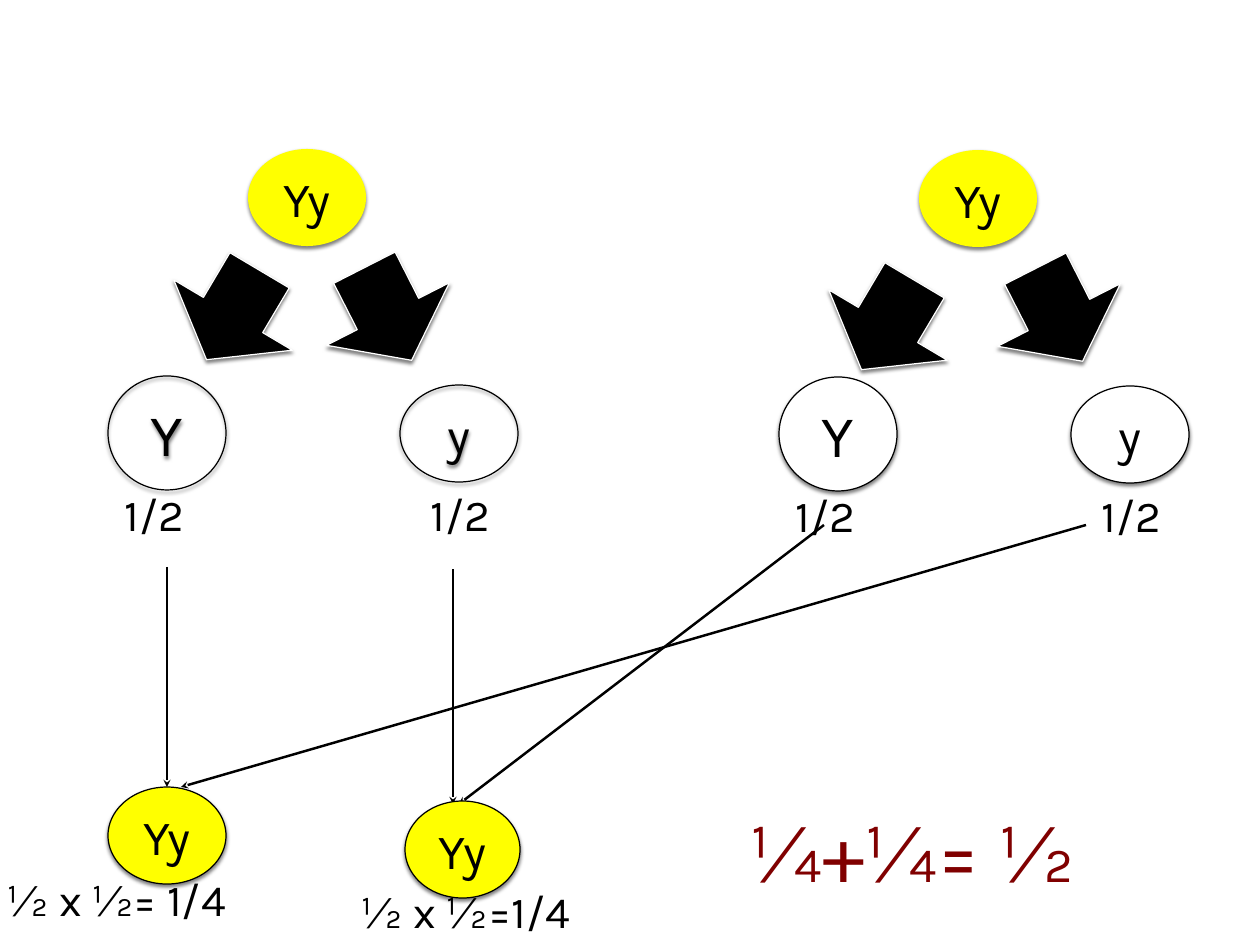
from lxml import etree
from pptx import Presentation
from pptx.dml.color import RGBColor
from pptx.enum.shapes import MSO_CONNECTOR, MSO_SHAPE
from pptx.enum.text import MSO_ANCHOR, PP_ALIGN
from pptx.oxml.ns import qn
from pptx.util import Pt

OVAL, ARROW = MSO_SHAPE.OVAL, MSO_SHAPE.RIGHT_ARROW
STRAIGHT = MSO_CONNECTOR.STRAIGHT
CENTER, RIGHT = PP_ALIGN.CENTER, PP_ALIGN.RIGHT
MIDDLE = MSO_ANCHOR.MIDDLE

SCALE = 914400 / 88.6
SLIDE = (1260, 945)
INSET = 5
FONT = "Karla"
BLACK, WHITE, YELLOW, MAROON = "000000", "FFFFFF", "FFFF00", "800000"

PARENTS = [
    {"offset": (0, 0), "gamete_fill": None, "left_arrow": (181, 246)},
    {"offset": (671, 1), "gamete_fill": WHITE, "left_arrow": (836, 256)},
]
PARENT = ("Yy", (248, 149, 118, 97), 40)
GAMETES = [
    ("Y", (108, 376, 118, 114), 48),
    ("y", (400, 385, 118, 97), 40),
]
CHANCE = "1/2"
CHANCE_LEFTS = (105, 411)
CHANCE_TOP, CHANCE_SIZE = 482, (84, 64)
RIGHT_ARROW_AT = (336, 245)
ARROW_SIZE = (104, 138)
LEFT_TURN, RIGHT_TURN = 120.7, 63

OFFSPRING = [
    {"genotype": "Yy", "box": (108, 787, 118, 97),
     "crosses": [(167, 567, 167, 787), (1086, 525, 181, 787)]},
    {"genotype": "Yy", "box": (405, 801, 115, 97),
     "crosses": [(453, 569, 453, 804), (824, 525, 459, 804)]},
]
SUMS = [
    ("½ x ½= 1/4", (0, 867, 231, 64), 36, BLACK),
    ("½ x ½=1/4", (330, 879, 245, 64), 36, BLACK),
    ("¼+¼= ½", (711, 796, 369, 108), 66, MAROON),
]


def px(*lengths):
    return [round(length * SCALE) for length in lengths]


def rgb(color):
    return RGBColor.from_string(color)


def moved(box, offset):
    return (box[0] + offset[0], box[1] + offset[1], *box[2:])


def write(holder, words, size, color, align):
    frame = holder.text_frame
    inset = px(INSET)[0]
    layout = {"word_wrap": True, "vertical_anchor": MIDDLE,
              "margin_left": inset, "margin_right": inset,
              "margin_top": inset, "margin_bottom": inset}
    for key, value in layout.items():
        setattr(frame, key, value)
    paragraph = frame.paragraphs[0]
    paragraph.alignment = align
    run = paragraph.add_run()
    run.text = words
    for key, value in {"name": FONT, "size": Pt(size)}.items():
        setattr(run.font, key, value)
    run.font.color.rgb = rgb(color)


def add_figure(slide, kind, box, fill, line):
    figure = slide.shapes.add_shape(kind, *px(*box))
    figure.shadow.inherit = False
    if fill:
        figure.fill.solid()
        figure.fill.fore_color.rgb = rgb(fill)
    else:
        figure.fill.background()
    if line:
        figure.line.color.rgb = rgb(line)
        figure.line.width = Pt(1)
    else:
        figure.line.fill.background()
    effects = figure._element.spPr.find(qn("a:effectLst"))
    shadow = etree.SubElement(effects, qn("a:outerShdw"), blurRad=str(Pt(3)),
                              dist=str(Pt(2)), dir="5400000", rotWithShape="0")
    tint = etree.SubElement(shadow, qn("a:srgbClr"), val=BLACK)
    etree.SubElement(tint, qn("a:alpha"), val="50000")
    return figure


def add_cell(slide, genotype, box, size, fill, line):
    cell = add_figure(slide, OVAL, box, fill, line)
    write(cell, genotype, size, BLACK, CENTER)


def add_arrow(slide, corner, turn):
    arrow = add_figure(slide, ARROW, (*corner, *ARROW_SIZE), BLACK, WHITE)
    arrow.rotation = turn


def add_label(slide, words, box, size, color):
    label = slide.shapes.add_textbox(*px(*box))
    write(label, words, size, color, RIGHT)


def add_cross(slide, ends):
    cross = slide.shapes.add_connector(STRAIGHT, *px(*ends))
    cross.line.color.rgb = rgb(BLACK)
    cross.line.width = Pt(2)
    etree.SubElement(cross.line._get_or_add_ln(), qn("a:tailEnd"), type="stealth")
    etree.SubElement(cross._element.spPr, qn("a:effectLst"))


def main():
    deck = Presentation()
    deck.slide_width, deck.slide_height = px(*SLIDE)
    slide = deck.slides.add_slide(deck.slide_layouts[6])

    for parent in PARENTS:
        offset = parent["offset"]
        genotype, box, size = PARENT
        add_cell(slide, genotype, moved(box, offset), size, YELLOW, None)
        for allele, box, size in GAMETES:
            add_cell(slide, allele, moved(box, offset), size,
                     parent["gamete_fill"], BLACK)
        add_arrow(slide, moved(RIGHT_ARROW_AT, offset), RIGHT_TURN)
        add_arrow(slide, parent["left_arrow"], LEFT_TURN)
        for left in CHANCE_LEFTS:
            box = moved((left, CHANCE_TOP, *CHANCE_SIZE), offset)
            add_label(slide, CHANCE, box, 36, BLACK)

    for child in OFFSPRING:
        for ends in child["crosses"]:
            add_cross(slide, ends)
        add_cell(slide, child["genotype"], child["box"], 40, YELLOW, BLACK)

    for words, box, size, color in SUMS:
        add_label(slide, words, box, size, color)

    deck.save("out.pptx")


if __name__ == "__main__":
    main()
